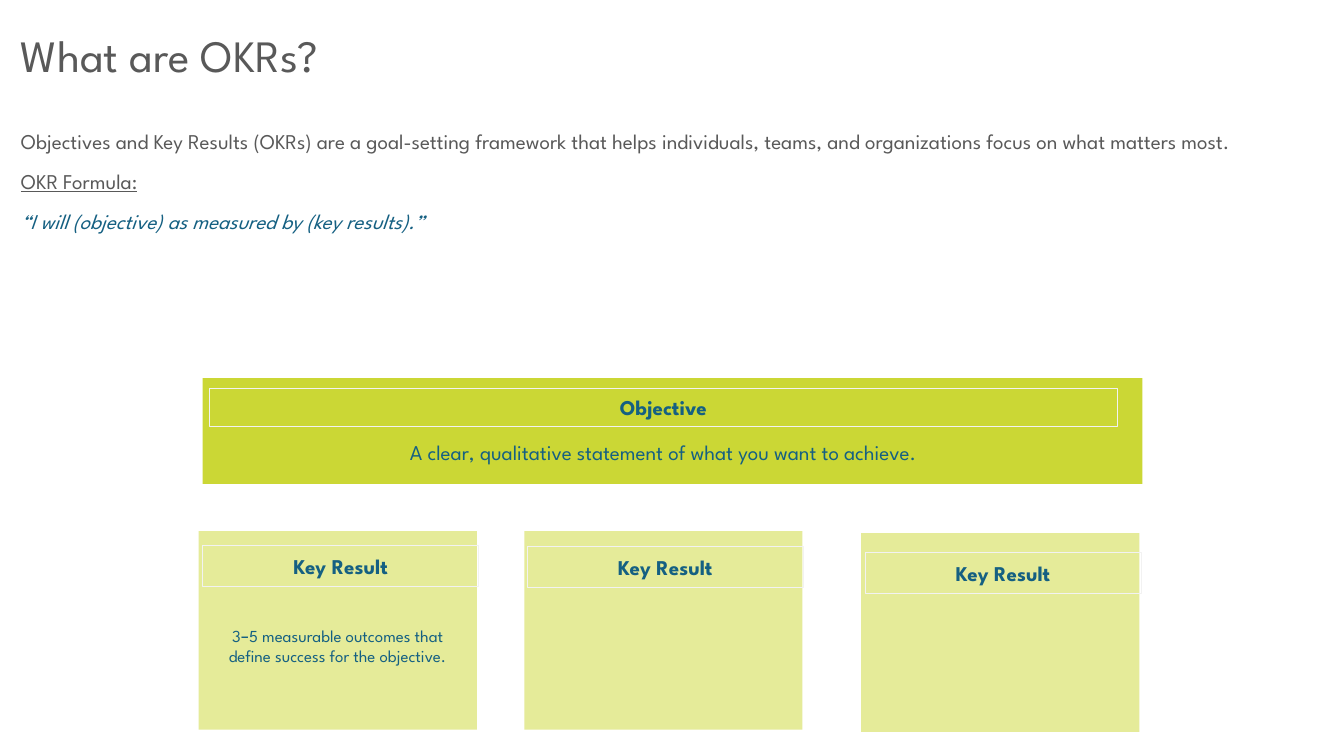
from pptx import Presentation
from pptx import util as u
from pptx.dml.color import RGBColor
from pptx.enum import shapes, text

GREY, BLUE, LIME, PALE, EDGE = "595959", "156082", "CBD735", "E5EB99", "F2F2F2"


def tint(code):
    return RGBColor.from_string(code)


class Deck:
    font = "League Spartan"

    def __init__(self, wide, high):
        self.file = Presentation()
        self.file.slide_width = u.Inches(wide)
        self.file.slide_height = u.Inches(high)
        self.slide = self.file.slides.add_slide(self.file.slide_layouts[6])

    def runs(self, para, parts, color, size, **form):
        """Fill a paragraph from (words, font) parts in one format."""
        for words, font in parts:
            run = para.add_run()
            run.text = words
            run.font.color.rgb = tint(color)
            style = {"name": font, "size": u.Pt(size), **form}
            for name, value in style.items():
                setattr(run.font, name, value)

    def line(self, para, words, color, size, **form):
        self.runs(para, [(words, self.font)], color, size, **form)

    def frame(self, *spot):
        box = self.slide.shapes.add_textbox(*map(u.Inches, spot)).text_frame
        box.word_wrap = True
        return box

    def rect(self, spot, fill=None, edge=None):
        box = self.slide.shapes.add_shape(
            shapes.MSO_SHAPE.RECTANGLE, *map(u.Inches, spot))
        box.shadow.inherit = False
        if fill:
            box.fill.solid()
            box.fill.fore_color.rgb = tint(fill)
        else:
            box.fill.background()
        if edge:
            box.line.color.rgb = tint(edge)
            box.line.width = u.Pt(0.5)
        else:
            box.line.fill.background()
        return box

    def label(self, spot, words):
        box = self.rect(spot, edge=EDGE).text_frame
        box.word_wrap = True
        box.vertical_anchor = text.MSO_ANCHOR.MIDDLE
        para = box.paragraphs[0]
        para.alignment = text.PP_ALIGN.CENTER
        self.line(para, words, BLUE, 15, bold=True)


def main():
    deck = Deck(13.33, 7.5)

    title = deck.frame(0.11, 0.23, 4.93, 0.64)
    deck.line(title.paragraphs[0], "What are OKRs?", GREY, 32)

    intro = deck.frame(0.11, 1.19, 12.96, 1.47)
    lines = [
        ("Objectives and Key Results (OKRs) are a goal-setting framework that "
         "helps individuals, teams, and organizations focus on what matters "
         "most.", GREY, {}),
        ("OKR Formula:", GREY, {"underline": True}),
        ("“I will (objective) as measured by (key results).”", BLUE,
         {"italic": True}),
    ]
    for i, (words, color, form) in enumerate(lines):
        para = intro.add_paragraph() if i else intro.paragraphs[0]
        para.line_spacing = 1.15
        para.space_after = u.Pt(8)
        deck.line(para, words, color, 15, **form)

    deck.rect((2.01, 3.75, 9.32, 1.05), LIME)
    deck.label((2.08, 3.85, 9, 0.38), "Objective")
    goal = deck.frame(2.08, 4.31, 9, 0.38).paragraphs[0]
    goal.alignment = text.PP_ALIGN.CENTER
    deck.line(goal, "A clear, qualitative statement of what you want to "
              "achieve.", BLUE, 15)

    # Each key result: corner of its card, then corner of its label
    results = [(1.97, 5.27, 2.01, 5.41), (5.2, 5.27, 5.23, 5.42),
               (8.54, 5.29, 8.58, 5.48)]
    for left, top, inner, head in results:
        deck.rect((left, top, 2.76, 1.97), PALE)
        deck.label((inner, head, 2.74, 0.41), "Key Result")

    note = deck.frame(1.98, 6.16, 2.74, 0.74).paragraphs[0]
    note.alignment = text.PP_ALIGN.CENTER
    parts = [("3", deck.font), ("–", "Cabin"),
             ("5 measurable outcomes that define success for the objective.",
              deck.font)]
    deck.runs(note, parts, BLUE, 12)

    deck.file.save("out.pptx")


if __name__ == "__main__":
    main()
